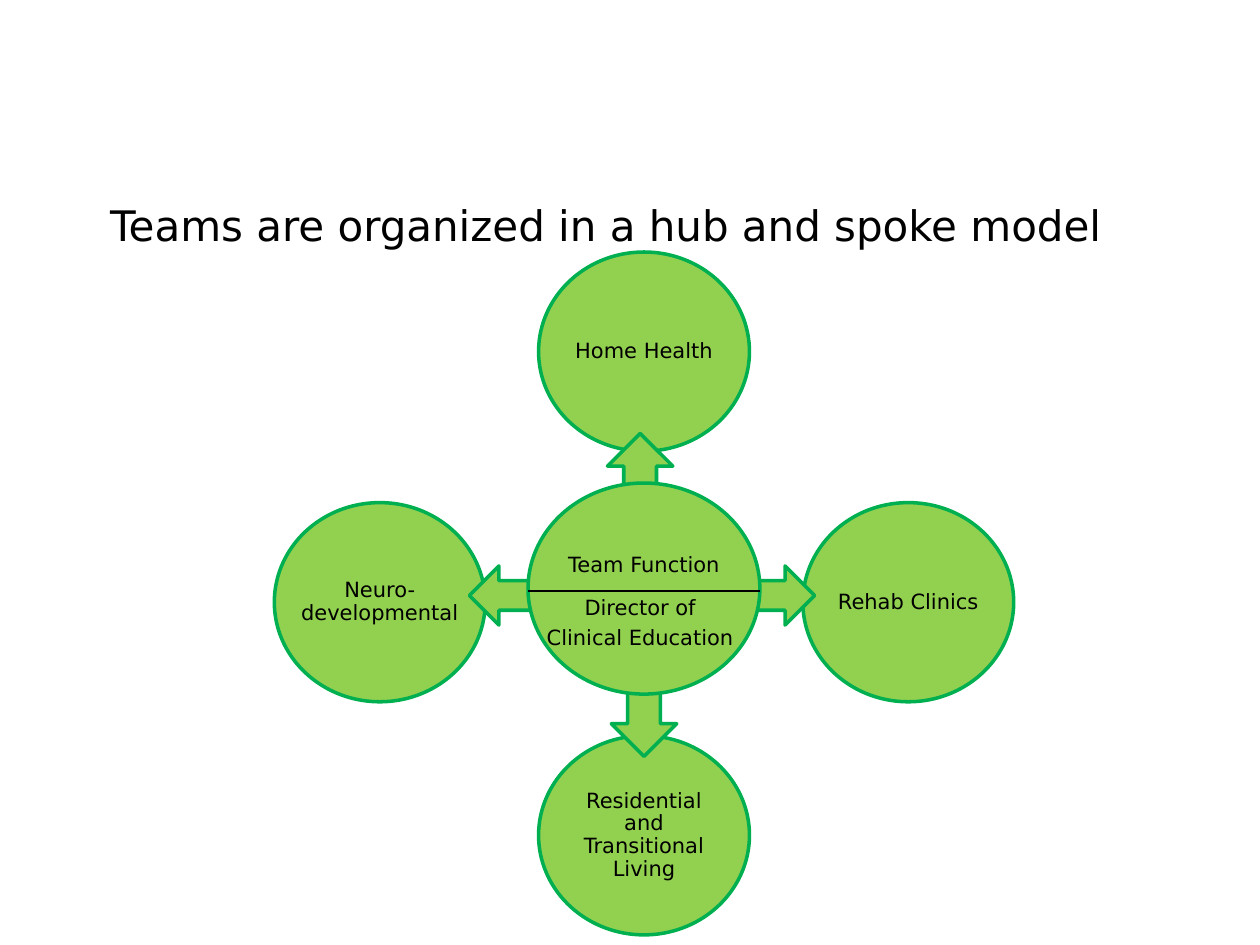
import pptx
import pptx.util
import pptx.dml.color
import pptx.enum.shapes
import pptx.enum.text
import lxml.etree
from dataclasses import dataclass

Pt = pptx.util.Pt
RGB = pptx.dml.color.RGBColor.from_string
SHAPE = pptx.enum.shapes.MSO_SHAPE
ANCHOR = pptx.enum.text.MSO_ANCHOR


@dataclass(frozen=True)
class Theme:
    font: str = "DejaVu Sans"
    text: str = "000000"
    fill: str = "92D050"
    line: str = "00B050"
    title_size: float = 24
    label_size: float = 12


theme = Theme()


def write(sp, lines, size=theme.label_size, spacing=0.9, after=0,
          anchor=ANCHOR.MIDDLE, wrap=False, margins=(0, 0, 0, 0)):
    tf = sp.text_frame
    tf.word_wrap = wrap
    tf.vertical_anchor = anchor
    tf.margin_left, tf.margin_top, tf.margin_right, tf.margin_bottom = map(Pt, margins)
    for i, line in enumerate(lines):
        p = tf.paragraphs[0] if i == 0 else tf.add_paragraph()
        p.text = line
        p.alignment = pptx.enum.text.PP_ALIGN.CENTER
        p.line_spacing = spacing
        p.space_after = Pt(after)
        for r in p.runs:
            r.font.name = theme.font
            r.font.size = Pt(size)
            r.font.color.rgb = RGB(theme.text)


def add_green(kind, cx, cy, w, h):
    sp = s.shapes.add_shape(kind, Pt(cx - w / 2), Pt(cy - h / 2), Pt(w), Pt(h))
    sp.shadow.inherit = False
    sp.fill.solid()
    sp.fill.fore_color.rgb = RGB(theme.fill)
    sp.line.color.rgb = RGB(theme.line)
    sp.line.width = Pt(2)
    return sp


prs = pptx.Presentation()
prs.slide_width, prs.slide_height = Pt(720), Pt(540)
s = prs.slides.add_slide(prs.slide_layouts[5])

# Title
title = s.shapes.title
title.left, title.top, title.width, title.height = Pt(40.3), Pt(107.3), Pt(612), Pt(42.5)
write(title, ["Teams are organized in a hub and spoke model"], size=theme.title_size,
      spacing=1, wrap=True, margins=(7.2, 3.6, 7.2, 3.6))

# Spokes around the hub
hub_x, hub_y = 368, 336.3
reach_x, reach_y = 151, 138.2
ring_y = 339.1
side_y = 344.1
spokes = [
    ("Home Health", hub_x, ring_y - reach_y),
    ("Rehab Clinics", hub_x + reach_x, side_y),
    ("Residential\vand\vTransitional\vLiving", hub_x, ring_y + reach_y),
    ("Neuro-\vdevelopmental", hub_x - reach_x, side_y),
]
for label, cx, cy in spokes:
    write(add_green(SHAPE.OVAL, cx, cy, 120.5, 113.8), [label])

# Arrows, partly hidden by the hub
arrows = [
    (SHAPE.UP_ARROW, 365.8, 275.4, 37.4, 55.4),
    (SHAPE.LEFT_ARROW, 294.5, 340.3, 52.6, 33.8),
    (SHAPE.DOWN_ARROW, 368, 406.3, 37.4, 52),
    (SHAPE.RIGHT_ARROW, 439.2, 340.3, 52.6, 33.8),
]
for arrow in arrows:
    add_green(*arrow)

# Hub
hub_w, hub_h = 132.5, 120.6
hub = add_green(SHAPE.OVAL, hub_x, hub_y, hub_w, hub_h)
write(hub, ["Team Function"], margins=(0, 0, 0, 26))

# Hub caption
caption = s.shapes.add_textbox(Pt(257.8), Pt(337.7), Pt(216), Pt(38.9))
write(caption, ["Director of", "Clinical Education"], after=4.2,
      anchor=ANCHOR.TOP, wrap=True, margins=(7.2, 3.6, 7.2, 3.6))

# Divider across the hub
divider = s.shapes.add_connector(
    pptx.enum.shapes.MSO_CONNECTOR.STRAIGHT,
    Pt(hub_x - hub_w / 2), Pt(337.7), Pt(hub_x + hub_w / 2), Pt(337.7))
divider.line.color.rgb = RGB(theme.text)
divider.line.width = Pt(0.75)
lxml.etree.SubElement(divider._element.spPr, pptx.oxml.ns.qn("a:effectLst"))

prs.save("out.pptx")
